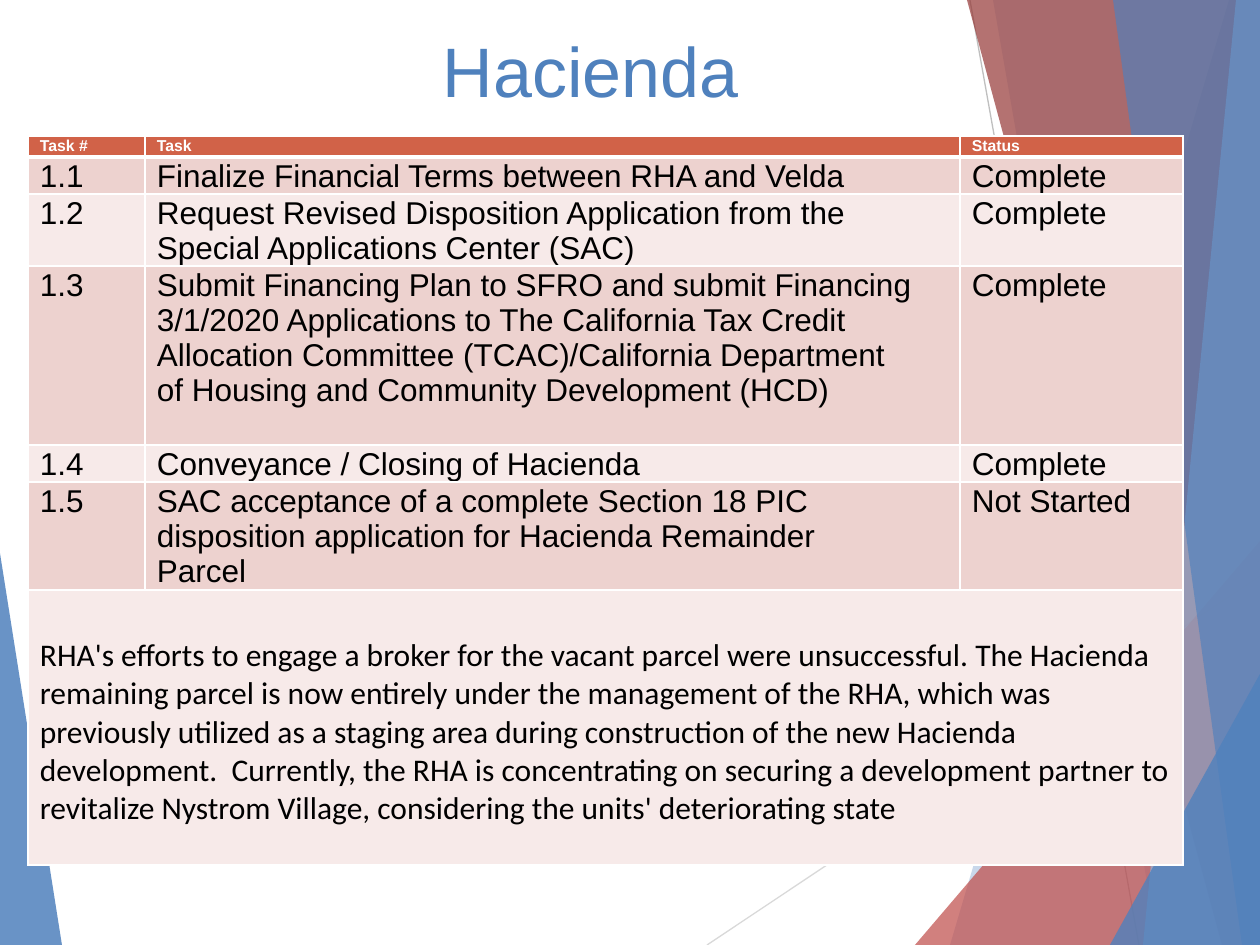
import pptx
import pptx.dml.color
import pptx.enum.shapes
import pptx.enum.text
import pptx.oxml
import pptx.oxml.ns
import pptx.util
from dataclasses import dataclass
from lxml import etree

SCALE = 914400 / 126
WIDE, HIGH = 1260, 945


@dataclass
class Theme:
    blue: str = "4F81BD"
    pale: str = "95B3D7"
    red: str = "C0504D"
    wine: str = "953735"
    white: str = "FFFFFF"
    black: str = "000000"
    head: str = "D16248"
    rule: str = "D9D9D9"
    edge: str = "BFBFBF"
    bands: tuple = ("EDD2CF", "F7EAE9")
    font: str = "Arial"
    note: str = "Calibri"
    big: int = 40
    body: int = 18
    small: int = 9
    lead: int = 20


def emu(px):
    return pptx.util.Emu(round(px * SCALE))


def rgb(tone):
    return pptx.dml.color.RGBColor.from_string(tone)


def add(node, tag, **attrs):
    return etree.SubElement(node, pptx.oxml.ns.qn(tag), **attrs)


class Deck:
    def __init__(self, theme):
        self.theme = theme
        self.file = pptx.Presentation()
        self.file.slide_width, self.file.slide_height = emu(WIDE), emu(HIGH)
        self.slide = self.file.slides.add_slide(self.file.slide_layouts[6])

    def style(self, frame, size, tone, font=None, bold=False, lead=None):
        for para in frame.paragraphs:
            if lead:
                para.line_spacing = pptx.util.Pt(lead)
            for run in para.runs:
                run.font.name = font or self.theme.font
                run.font.size = pptx.util.Pt(size)
                run.font.bold = bold
                run.font.color.rgb = rgb(tone)

    def shard(self, points, tone, alpha):
        """Draw a see-through polygon; alpha is in percent."""
        form = self.slide.shapes.build_freeform(*points[0], scale=SCALE)
        form.add_line_segments(points[1:], close=True)
        shape = form.convert_to_shape()
        shape.shadow.inherit = False
        shape.fill.solid()
        shape.fill.fore_color.rgb = rgb(tone)
        shape.line.fill.background()
        color = shape.fill._xPr.find(".//" + pptx.oxml.ns.qn("a:srgbClr"))
        add(color, "a:alpha", val=str(alpha * 1000))

    def line(self, x1, y1, x2, y2, tone):
        kind = pptx.enum.shapes.MSO_CONNECTOR.STRAIGHT
        line = self.slide.shapes.add_connector(
            kind, emu(x1), emu(y1), emu(x2), emu(y2))
        line.line.color.rgb = rgb(tone)
        line.line.width = pptx.util.Pt(0.75)
        add(line._element.spPr, "a:effectLst")

    def title(self, text, x, y, w, h):
        box = self.slide.shapes.add_textbox(emu(x), emu(y), emu(w), emu(h))
        frame = box.text_frame
        frame.word_wrap = True
        frame.margin_left = frame.margin_right = 0
        frame.margin_top = frame.margin_bottom = 0
        frame.text = text
        frame.paragraphs[0].alignment = pptx.enum.text.PP_ALIGN.CENTER
        self.style(frame, self.theme.big, self.theme.blue)

    def grid(self, x, y, cols, rows):
        """Add an unfilled table from lists of column widths and row heights."""
        table = self.slide.shapes.add_table(
            len(rows), len(cols), emu(x), emu(y),
            emu(sum(cols)), emu(sum(rows))).table
        for col, wide in zip(table.columns, cols):
            col.width = emu(wide)
        for row, high in zip(table.rows, rows):
            row.height = emu(high)
        return table

    def cell(self, cell, text, fill, size, tone, font=None, bold=False,
             lead=None, top=1, right=0, over=1, under=1):
        """Fill one cell; over and under are its top and bottom rule in points."""
        cell.margin_left, cell.margin_right = emu(12), emu(right)
        cell.margin_top, cell.margin_bottom = emu(top), 0
        cell.text_frame.text = text
        self.style(cell.text_frame, size, tone, font, bold, lead)
        props = cell._tc.get_or_add_tcPr()
        for side, pt in (("L", 1), ("R", 1), ("T", over), ("B", under)):
            rule = add(props, "a:ln" + side, w=str(pt * 12700))
            add(add(rule, "a:solidFill"), "a:srgbClr", val=self.theme.white)
        cell.fill.solid()
        cell.fill.fore_color.rgb = rgb(fill)


HEADS = ("Task #", "Task", "Status")
# number, task, status, right margin of the task
TASKS = (
    ("1.1", "Finalize Financial Terms between RHA and Velda", "Complete", 45),
    ("1.2", "Request Revised Disposition Application from the\n"
            "Special Applications Center (SAC)", "Complete", 45),
    ("1.3", "Submit Financing Plan to SFRO and submit Financing 3/1/2020 "
            "Applications to The California Tax Credit Allocation Committee "
            "(TCAC)/California Department of Housing and Community "
            "Development (HCD)", "Complete", 45),
    ("1.4", "Conveyance / Closing of Hacienda", "Complete", 45),
    ("1.5", "SAC acceptance of a complete Section 18 PIC disposition "
            "application for Hacienda Remainder Parcel", "Not Started", 60),
)
NOTE = (
    "RHA's efforts to engage a broker for the vacant parcel were "
    "unsuccessful. The Hacienda remaining parcel is now entirely under the "
    "management of the RHA, which was previously utilized as a staging area "
    "during construction of the new Hacienda development.  Currently, the RHA "
    "is concentrating on securing a development partner to revitalize Nystrom "
    "Village, considering the units' deteriorating state"
)


def backdrop(deck):
    theme = deck.theme
    deck.shard([(0, 553), (62, HIGH), (0, HIGH)], theme.blue, 85)
    deck.line(707, HIGH, WIDE, 576, theme.rule)
    deck.line(970, 0, 1139, HIGH, theme.edge)

    def band(top, foot, tone, alpha):
        """Fill from a slanted edge to the right side of the slide."""
        deck.shard([(top, 0), (foot, HIGH), (WIDE, HIGH), (WIDE, 0)],
                   tone, alpha)

    def wedge(foot, rise, tone, alpha):
        """Fill the lower right corner."""
        deck.shard([(foot, HIGH), (WIDE, rise), (WIDE, HIGH)], tone, alpha)

    band(1229, 950, theme.blue, 30)
    band(993, 1158, theme.blue, 20)
    wedge(915, 541, theme.red, 72)
    band(967, 1222, theme.wine, 70)
    band(1236, 1143, theme.pale, 70)
    band(1113, 1242, theme.blue, 65)
    wedge(1110, 674, theme.blue, 80)


def tasks(deck):
    theme = deck.theme
    table = deck.grid(28, 136, [117, 815, 223], [21, 37, 72, 179, 36, 108, 275])
    for col, text in enumerate(HEADS):
        deck.cell(table.cell(0, col), text, theme.head, theme.small,
                  theme.white, bold=True, under=3)
    for row, (code, task, state, right) in enumerate(TASKS, 1):
        for col, text in enumerate((code, task, state)):
            deck.cell(table.cell(row, col), text, theme.bands[(row - 1) % 2],
                      theme.body, theme.black, lead=theme.lead,
                      right=right if col == 1 else 0,
                      top=2, over=3 if row == 1 else 1)
    last = len(TASKS) + 1
    table.cell(last, 0).merge(table.cell(last, 2))
    for col in range(3):
        deck.cell(table.cell(last, col), "" if col else NOTE, theme.bands[1],
                  theme.body, theme.black, font=theme.note, top=46)


def main():
    deck = Deck(Theme())
    backdrop(deck)
    deck.title("Hacienda", 121, 28, 939, 80)
    tasks(deck)
    deck.file.save("out.pptx")


if __name__ == "__main__":
    main()
